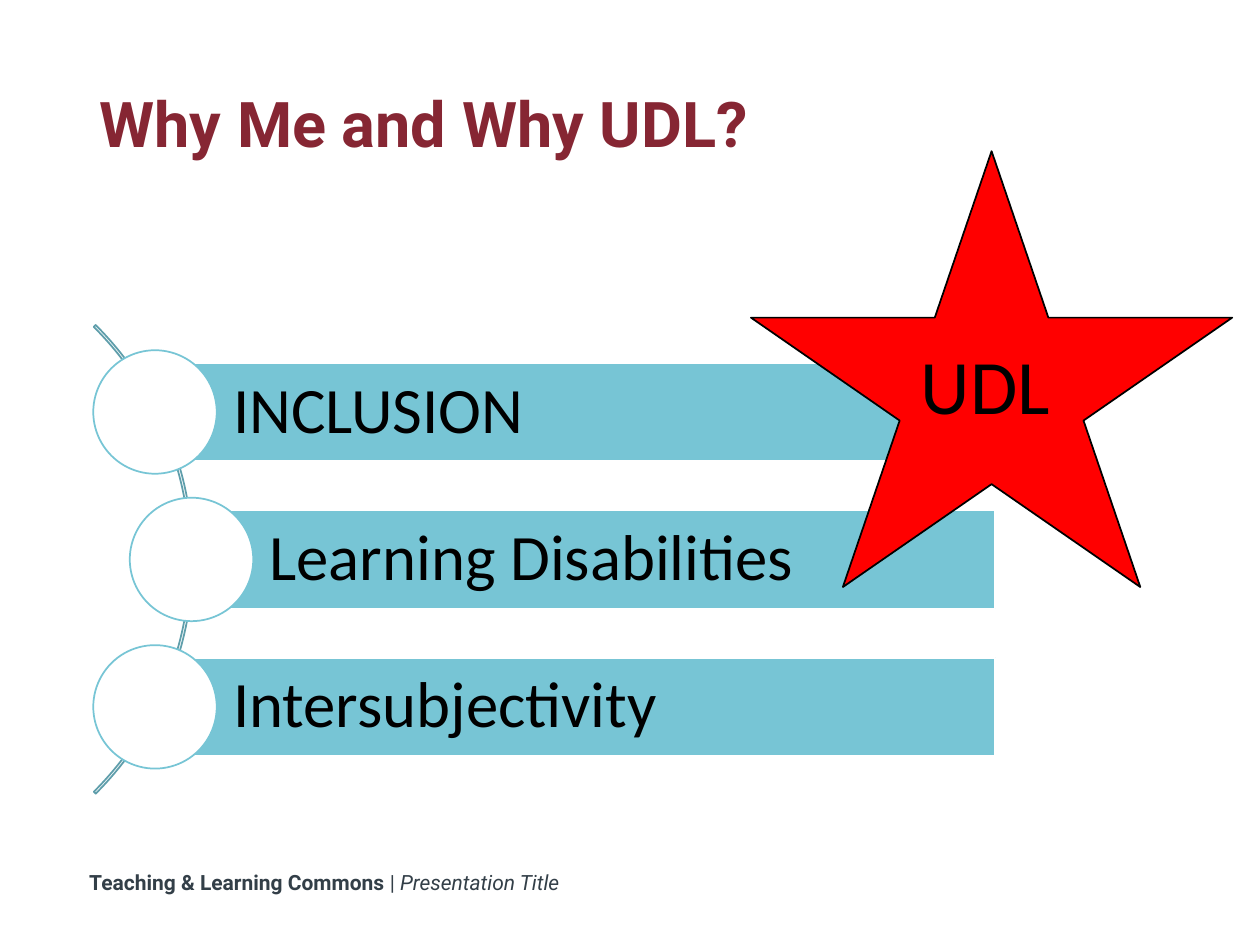
from pptx import Presentation
from pptx.dml.color import RGBColor
from pptx.enum.shapes import MSO_SHAPE as Geo
from pptx.enum.text import MSO_ANCHOR as Anchor, PP_ALIGN as Align
from pptx.util import Pt

HEX = {"teal": "77C5D5", "arc": "5F9EAB", "white": "FFFFFF", "black": "000000",
       "red": "FF0000", "wine": "862633", "slate": "333F48"}


class Deck:
    def __init__(self):
        self.prs = Presentation()
        self.prs.slide_width, self.prs.slide_height = Pt(720), Pt(540)
        self.slide = self.prs.slides.add_slide(self.prs.slide_layouts[6])

    def tint(self, name):
        return RGBColor.from_string(HEX[name])

    def shape(self, geo, box, fill, line):
        item = self.slide.shapes.add_shape(geo, *map(Pt, box))
        item.shadow.inherit = False
        if fill:
            item.fill.solid()
            item.fill.fore_color.rgb = self.tint(fill)
        else:
            item.fill.background()
        item.line.color.rgb = self.tint(line)
        item.line.width = Pt(1)
        return item

    def label(self, item, parts, size, font, color, anchor=Anchor.TOP, inset=7.2, space=1):
        """Fill a shape with one line made of (text, bold, italic) parts."""
        frame = item.text_frame
        frame.word_wrap = True
        frame.vertical_anchor = anchor
        frame.margin_left = Pt(inset)
        para = frame.paragraphs[0]
        para.alignment = Align.LEFT
        para.line_spacing = space
        for text, bold, slant in parts:
            run = para.add_run()
            run.text = text
            face = run.font
            face.name, face.size = font, Pt(size)
            face.bold, face.italic = bold, slant
            face.color.rgb = self.tint(color)

    def text(self, box, *args, **style):
        self.label(self.slide.shapes.add_textbox(*map(Pt, box)), *args, **style)

    def arc(self, box):
        item = self.shape(Geo.BLOCK_ARC, box, None, "arc")
        for i, value in enumerate((189, 27, 0.004)):
            item.adjustments[i] = value

    def bar(self, name, left, mid):
        """Draw a labelled bar, centred on mid, with a circle on its left end."""
        right, high, size = 568.8, 56.16, 70.56
        item = self.shape(Geo.RECTANGLE, (left, mid - high / 2, right - left, high),
                          "teal", "white")
        self.label(item, [(name, False, False)], 37, "Calibri", "black",
                   anchor=Anchor.MIDDLE, inset=44.64, space=0.9)
        self.shape(Geo.OVAL, (left - size / 2, mid - size / 2, size, size),
                   "white", "teal")


def main():
    deck = Deck()
    deck.text((43.92, 493.2, 418.32, 21.6),
              [("Teaching & Learning Commons ", True, False), ("| ", False, False),
               ("Presentation Title", False, True)], 12, "Roboto", "slate")
    deck.text((49.68, 47.52, 620.64, 49.68), [("Why Me and Why UDL?", True, False)],
              36, "Roboto", "wine", anchor=Anchor.MIDDLE, space=0.9)

    deck.arc((-268.56, 130.32, 378.72, 378.72))
    rows = (("INCLUSION", 88.56), ("Learning Disabilities", 109.44),
            ("Intersubjectivity", 88.56))
    for i, (name, left) in enumerate(rows):
        deck.bar(name, left, 235.44 + 84.24 * i)

    deck.shape(Geo.STAR_5_POINT, (429.12, 86.4, 275.04, 249.12), "red", "black")
    deck.text((519.12, 189.36, 118.8, 60.48), [("UDL", False, False)],
              44, "Calibri", "black")
    deck.prs.save("out.pptx")


if __name__ == "__main__":
    main()
